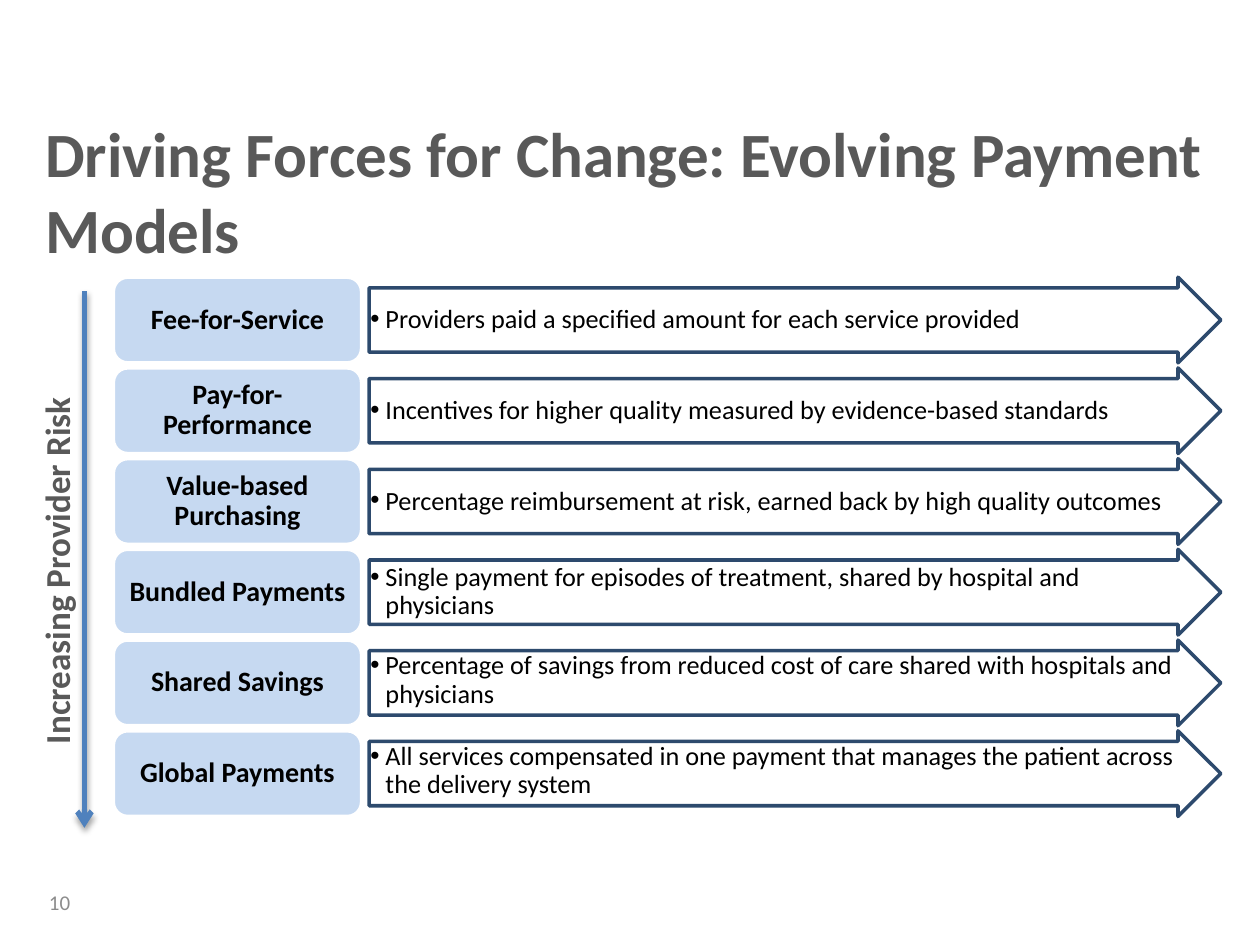
from lxml import etree
from pptx import Presentation
from pptx.dml.color import RGBColor
from pptx.enum.shapes import MSO_CONNECTOR as Connector, MSO_SHAPE as Shape
from pptx.enum.text import MSO_ANCHOR as Anchor, PP_ALIGN as Align
from pptx.oxml.ns import qn
from pptx.util import Inches, Pt

FONT = "Calibri"
BLACK, WHITE, GRAY, PALE_GRAY = "000000", "FFFFFF", "595959", "8C8C8C"
NAVY, PALE_BLUE, BLUE = "17375E", "C6D9F1", "4F81BD"

# Model, description, vertical anchor of the description
MODELS = [
    ("Fee-for-Service", "Providers paid a specified amount for each service provided", Anchor.MIDDLE),
    ("Pay-for-Performance", "Incentives for higher quality measured by evidence-based standards", Anchor.MIDDLE),
    ("Value-based Purchasing", "Percentage reimbursement at risk, earned back by high quality outcomes",
     Anchor.MIDDLE),
    ("Bundled Payments", "Single payment for episodes of treatment, shared by hospital and physicians",
     Anchor.MIDDLE),
    ("Shared Savings", "Percentage of savings from reduced cost of care shared with hospitals and physicians",
     Anchor.TOP),
    ("Global Payments", "All services compensated in one payment that manages the patient across the delivery system",
     Anchor.TOP),
]


def rgb(color):
    return RGBColor.from_string(color)


def sub(parent, tag, **attributes):
    return etree.SubElement(parent, qn(tag), attributes)


def add_text(slide, text, box, size, color=BLACK, bold=False, align=Align.LEFT,
             anchor=Anchor.TOP, margins=(0.1, 0.05), spacing=1.0, bullet=False):
    textbox = slide.shapes.add_textbox(*map(Inches, box))
    frame = textbox.text_frame
    frame.word_wrap = True
    frame.vertical_anchor = anchor
    frame.margin_left = frame.margin_right = Inches(margins[0])
    frame.margin_top = frame.margin_bottom = Inches(margins[1])
    paragraph = frame.paragraphs[0]
    paragraph.alignment = align
    paragraph.line_spacing = spacing
    if bullet:
        paragraph.level = 1
        properties = paragraph._p.get_or_add_pPr()
        properties.set("marL", str(Inches(0.12)))
        properties.set("indent", str(-Inches(0.12)))
        sub(properties, "a:buFont", typeface="Arial")
        sub(properties, "a:buChar", char="•")
    run = paragraph.add_run()
    run.text = text
    font = run.font
    font.name, font.size, font.bold = FONT, Pt(size), bold
    font.color.rgb = rgb(color)
    return textbox


def add_panel(slide, preset, box, fill, line):
    panel = slide.shapes.add_shape(preset, *map(Inches, box))
    panel.shadow.inherit = False
    panel.fill.solid()
    panel.fill.fore_color.rgb = rgb(fill)
    panel.line.color.rgb = rgb(line)
    panel.line.width = Pt(2)
    return panel


def add_model_row(slide, box, model, description, anchor):
    left, top, width, height = box
    label_width, arrow_offset = 1.97, 2.03
    arrow_left = left + arrow_offset
    arrow_width = width - arrow_offset

    # Arrow with its description
    arrow = add_panel(slide, Shape.RIGHT_ARROW, (arrow_left, top, arrow_width, height), WHITE, NAVY)
    arrow.adjustments[0], arrow.adjustments[1] = 0.75, 0.5
    line_color = arrow.line._ln.find(".//" + qn("a:srgbClr"))
    sub(line_color, "a:alpha", val="90000")
    add_text(slide, description, (arrow_left, top + height / 8, arrow_width - 0.26, height * 0.75),
             15, anchor=anchor, margins=(0.01, 0.01), spacing=0.9, bullet=True)

    # Name of the payment model
    add_panel(slide, Shape.ROUNDED_RECTANGLE, (left, top, label_width, height), PALE_BLUE, WHITE)
    add_text(slide, model, (left + 0.03, top + 0.03, label_width - 0.06, height - 0.06), 16,
             bold=True, align=Align.CENTER, anchor=Anchor.MIDDLE, margins=(0.07, 0.03), spacing=0.9)


def add_models(slide, box):
    left, top, width, height = box
    row_height = 0.68
    pitch = (height - row_height) / (len(MODELS) - 1)
    for index, model in enumerate(MODELS):
        add_model_row(slide, (left, top + index * pitch, width, row_height), *model)


def add_risk_axis(slide, box):
    left, top, width, height = box

    # Downward arrow with a soft shadow
    right = Inches(left + width)
    axis = slide.shapes.add_connector(Connector.STRAIGHT, right, Inches(top), right, Inches(top + height))
    axis.line.color.rgb = rgb(BLUE)
    axis.line.width = Pt(3)
    sub(axis.line._ln, "a:tailEnd", type="arrow")
    effects = sub(axis._element.spPr, "a:effectLst")
    shadow = sub(effects, "a:outerShdw", blurRad=str(Pt(3.1)), dist=str(Pt(1.8)),
                 dir="5400000", rotWithShape="0")
    sub(sub(shadow, "a:srgbClr", val=BLACK), "a:alpha", val="35000")

    # Caption reading upwards beside the arrow
    length, thickness = 5.56, 0.44
    center_x, center_y = left + thickness / 2, top + 2.22
    caption = add_text(slide, "Increasing Provider Risk",
                       (center_x - length / 2, center_y - thickness / 2, length, thickness),
                       20, GRAY, bold=True, align=Align.CENTER)
    caption.rotation = 270


def main():
    deck = Presentation()
    deck.slide_width, deck.slide_height = Inches(10), Inches(7.5)
    slide = deck.slides.add_slide(deck.slide_layouts[6])

    add_models(slide, (0.9, 2.2, 8.79, 4.28))
    add_text(slide, "Driving Forces for Change: Evolving Payment Models",
             (0.26, 0.86, 9.59, 1.31), 36, GRAY, bold=True)
    add_risk_axis(slide, (0.23, 2.31, 0.44, 4.26))
    add_text(slide, "10", (0.29, 6.96, 0.71, 0.4), 12, PALE_GRAY, anchor=Anchor.MIDDLE)

    deck.save("out.pptx")


if __name__ == "__main__":
    main()
